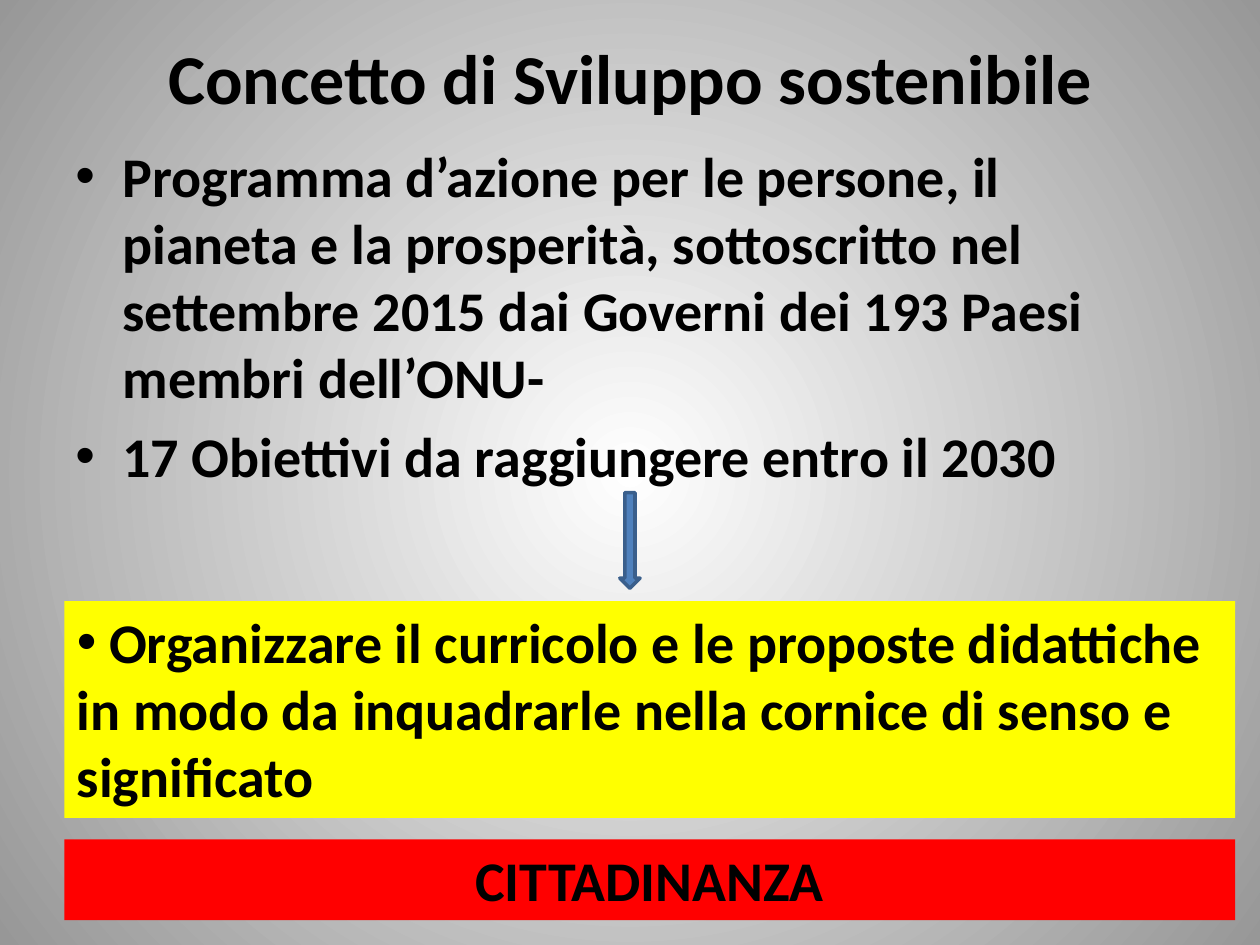
import pptx
import pptx.dml.color
import pptx.enum.shapes
import pptx.enum.text
import pptx.oxml
import pptx.oxml.ns
import pptx.util

Cm, Pt = pptx.util.Cm, pptx.util.Pt
ALIGN = pptx.enum.text.PP_ALIGN
ANCHOR = pptx.enum.text.MSO_ANCHOR
SHAPE = pptx.enum.shapes.MSO_SHAPE
SLIDE_WIDTH, SLIDE_HEIGHT = 25.4, 19.05
MARGIN = 1.27
PANEL_LEFT, PANEL_WIDTH = 1.3, 23.6


def colour(hex_code):
    """Return the RGB colour for a hex string."""
    return pptx.dml.color.RGBColor.from_string(hex_code)


def write(paragraph, text, size=32, align=ALIGN.LEFT):
    """Add one bold black run to a paragraph."""
    paragraph.alignment = align
    run = paragraph.add_run()
    run.text = text
    run.font.name = "Calibri"
    run.font.size = Pt(size)
    run.font.bold = True
    run.font.color.rgb = colour("000000")


def add_bullet(paragraph, hanging=0):
    """Give a paragraph a round bullet with a hanging indent in cm."""
    properties = paragraph._p.get_or_add_pPr()
    properties.set("marL", str(Cm(hanging)))
    properties.set("indent", str(-Cm(hanging)))
    namespace = pptx.oxml.ns.nsdecls("a")
    for tag in ('buFont typeface="Arial"', 'buChar char="•"'):
        properties.append(pptx.oxml.parse_xml(f"<a:{tag} {namespace}/>"))


def paint_background(slide):
    """Fill the slide with a gradient from a white centre to grey corners."""
    fill = slide.background.fill
    fill.gradient()
    for stop, position, shade in zip(fill.gradient_stops, (0, 1), ("FFFFFF", "979797")):
        stop.position = position
        stop.color.rgb = colour(shade)
    gradient = slide.element.find(".//" + pptx.oxml.ns.qn("a:gradFill"))
    gradient.remove(gradient.find(pptx.oxml.ns.qn("a:lin")))
    gradient.append(pptx.oxml.parse_xml(
        f'<a:path {pptx.oxml.ns.nsdecls("a")} path="circle">'
        '<a:fillToRect l="50000" t="50000" r="50000" b="50000"/></a:path>'))


def place_title(slide, left, top, width, height):
    """Move and format the title placeholder."""
    title = slide.shapes.title
    title.left, title.top, title.width, title.height = map(Cm, (left, top, width, height))
    frame = title.text_frame
    frame.auto_size = pptx.enum.text.MSO_AUTO_SIZE.NONE
    frame.vertical_anchor = ANCHOR.MIDDLE
    write(frame.paragraphs[0], "Concetto di Sviluppo sostenibile", 40, ALIGN.CENTER)


def place_points(slide, left, top, width, height, points):
    """Add the bulleted list of points."""
    frame = slide.shapes.add_textbox(*map(Cm, (left, top, width, height))).text_frame
    frame.word_wrap = True
    for index, point in enumerate(points):
        paragraph = frame.add_paragraph() if index else frame.paragraphs[0]
        paragraph.space_before = Pt(6.4)
        write(paragraph, point)
        add_bullet(paragraph, 0.95)


def place_arrow(slide, left, top, width, height):
    """Add the arrow leading down to the panels."""
    arrow = slide.shapes.add_shape(SHAPE.DOWN_ARROW, *map(Cm, (left, top, width, height)))
    arrow.shadow.inherit = False
    arrow.fill.solid()
    arrow.fill.fore_color.rgb = colour("4F81BD")
    arrow.line.color.rgb = colour("3A5F8C")
    arrow.line.width = Pt(2)


def place_panel(slide, left, top, width, height, text, fill, align=ALIGN.LEFT):
    """Add a filled text panel and return its paragraph."""
    panel = slide.shapes.add_shape(SHAPE.RECTANGLE, *map(Cm, (left, top, width, height)))
    panel.shadow.inherit = False
    panel.fill.solid()
    panel.fill.fore_color.rgb = colour(fill)
    panel.line.fill.background()
    frame = panel.text_frame
    frame.word_wrap = True
    frame.auto_size = pptx.enum.text.MSO_AUTO_SIZE.SHAPE_TO_FIT_TEXT
    frame.vertical_anchor = ANCHOR.TOP
    write(frame.paragraphs[0], text, align=align)
    return frame.paragraphs[0]


def main():
    """Build and save the slide."""
    deck = pptx.Presentation()
    deck.slide_width, deck.slide_height = Cm(SLIDE_WIDTH), Cm(SLIDE_HEIGHT)
    slide = deck.slides.add_slide(deck.slide_layouts.get_by_name("Title Only"))
    paint_background(slide)
    content_width = SLIDE_WIDTH - 2 * MARGIN
    place_title(slide, MARGIN, 0.76, content_width, 1.55)
    place_points(slide, MARGIN, 2.72, content_width, 15.8, (
        "Programma d’azione per le persone, il pianeta e la prosperità, "
        "sottoscritto nel settembre 2015 dai Governi dei 193 Paesi membri dell’ONU-",
        "17 Obiettivi da raggiungere entro il 2030"))
    arrow_width = 0.41
    place_arrow(slide, (SLIDE_WIDTH - arrow_width) / 2, 9.93, arrow_width, 1.93)
    curriculum = place_panel(
        slide, PANEL_LEFT, 12.12, PANEL_WIDTH, 4.37,
        " Organizzare il curricolo e le proposte didattiche in modo da "
        "inquadrarle nella cornice di senso e significato", "FFFF00")
    add_bullet(curriculum)
    place_panel(slide, PANEL_LEFT, 16.92, PANEL_WIDTH, 1.63,
                "CITTADINANZA", "FF0000", ALIGN.CENTER)
    deck.save("out.pptx")


if __name__ == "__main__":
    main()
